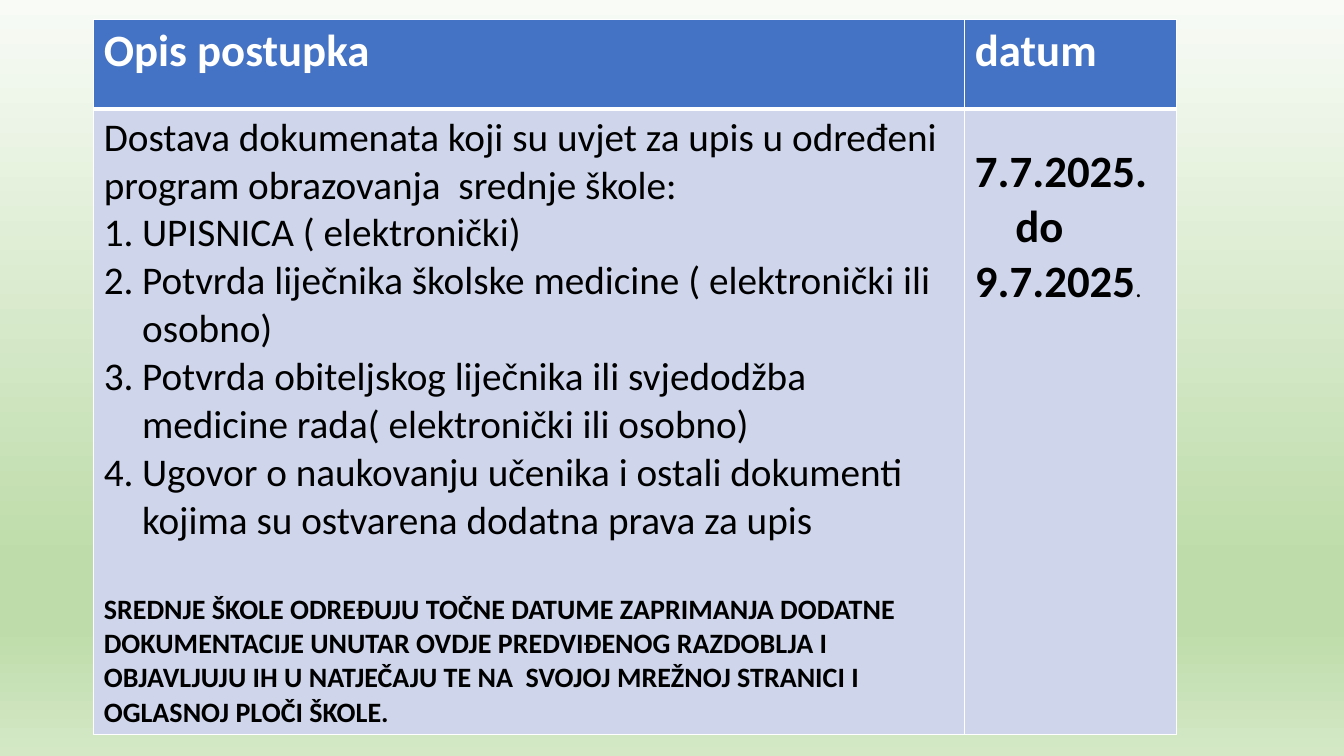
"""Build the slide with the table of enrolment documents and dates."""
from dataclasses import dataclass

from lxml import etree
from pptx import Presentation
from pptx.dml.color import RGBColor
from pptx.oxml.ns import qn
from pptx.slide import Slide
from pptx.table import _Cell
from pptx.util import Inches, Pt

WHITE = RGBColor(0xFF, 0xFF, 0xFF)
BLACK = RGBColor(0, 0, 0)
BLUE = RGBColor(0x44, 0x72, 0xC4)
PALE = RGBColor(0xCF, 0xD5, 0xEA)
MIST = RGBColor(0xF8, 0xFB, 0xF6)
LEAF = RGBColor(0xBE, 0xDC, 0xAA)
MINT = RGBColor(0xD4, 0xE8, 0xC6)
STOPS = ((0, MIST), (74, LEAF), (83, LEAF), (100, MINT))
FONT = "Calibri"


@dataclass
class Para:
    """A paragraph of a cell."""
    text: str
    size: int
    bold: bool = False
    step: bool = False
    left: float = 0
    before: int = 0
    tail: str = ""


@dataclass
class Box:
    """A cell with its fill, text colour and top margin."""
    paras: list[Para]
    fill: RGBColor
    ink: RGBColor
    top: float = 0.05


STEPS = (
    "UPISNICA ( elektronički)",
    "Potvrda liječnika školske medicine ( elektronički ili osobno)",
    "Potvrda obiteljskog liječnika ili svjedodžba medicine rada( elektronički ili osobno)",
    "Ugovor o naukovanju učenika i ostali dokumenti kojima su ostvarena dodatna prava za upis",
)
INTRO = "Dostava dokumenata koji su uvjet za upis u određeni program obrazovanja  srednje škole:"
NOTE = (
    "SREDNJE ŠKOLE ODREĐUJU TOČNE DATUME ZAPRIMANJA DODATNE DOKUMENTACIJE "
    "UNUTAR OVDJE PREDVIĐENOG RAZDOBLJA I OBJAVLJUJU IH U NATJEČAJU TE NA  "
    "SVOJOJ MREŽNOJ STRANICI I OGLASNOJ PLOČI ŠKOLE."
)
TASKS = [
    Para(INTRO, 28),
    *(Para(text, 28, step=True, left=0.38) for text in STEPS),
    Para(NOTE, 20, True, before=34),
]
DATES = [
    Para("7.7.2025.", 32, True),
    Para("do", 32, True, left=0.4),
    Para("9.7.2025", 32, True, tail="."),
]
ROWS = (
    (Box([Para("Opis postupka", 32, True)], BLUE, WHITE),
     Box([Para("datum", 32, True)], BLUE, WHITE)),
    (Box(TASKS, PALE, BLACK), Box(DATES, PALE, BLACK, 0.36)),
)
COLS = (8.64, 2.1)
HIGHS = (0.89, 6.16)


def paint(slide: Slide) -> None:
    """Give the slide its gradient background."""
    fill = slide.background.fill
    fill.gradient()
    fill.gradient_angle = 270
    stops = next(slide.element.iter(qn("a:gsLst")))
    for old in list(stops):
        stops.remove(old)
    for place, color in STOPS:
        stop = etree.SubElement(stops, qn("a:gs"), pos=str(place * 1000))
        etree.SubElement(stop, qn("a:srgbClr"), val=str(color))


def edge(cell: _Cell, side: str, width: int) -> None:
    """Draw one white border of a cell."""
    props = cell._tc.get_or_add_tcPr()
    line = etree.SubElement(props, qn(f"a:ln{side}"), w=str(Pt(width)))
    fill = etree.SubElement(line, qn("a:solidFill"))
    etree.SubElement(fill, qn("a:srgbClr"), val=str(WHITE))


def write(cell: _Cell, box: Box) -> None:
    """Write the paragraphs of a cell."""
    frame = cell.text_frame
    for i, item in enumerate(box.paras):
        para = frame.add_paragraph() if i else frame.paragraphs[0]
        para.font.name = FONT
        para.font.size = Pt(item.size)
        para.font.bold = item.bold
        para.font.color.rgb = box.ink
        para.space_before = Pt(item.before)
        para.add_run().text = item.text
        if item.tail:
            end = para.add_run()
            end.text = item.tail
            end.font.size = Pt(18)
            end.font.bold = False
        props = para._p.get_or_add_pPr()
        props.set("marL", str(Inches(item.left)))
        if item.step:
            props.set("indent", str(-Inches(item.left)))
            mark = etree.Element(qn("a:buAutoNum"), type="arabicPeriod")
            props.find(qn("a:defRPr")).addprevious(mark)


def main() -> None:
    """Build and save the slide."""
    deck = Presentation()
    deck.slide_width, deck.slide_height = Inches(13.33), Inches(7.5)
    slide = deck.slides.add_slide(deck.slide_layouts[6])
    paint(slide)
    table = slide.shapes.add_table(
        len(ROWS), len(COLS), Inches(0.93), Inches(0.19),
        Inches(sum(COLS)), Inches(sum(HIGHS))).table
    for col, wide in zip(table.columns, COLS):
        col.width = Inches(wide)
    for r, (row, high) in enumerate(zip(ROWS, HIGHS)):
        table.rows[r].height = Inches(high)
        for c, box in enumerate(row):
            cell = table.cell(r, c)
            cell.margin_top = Inches(box.top)
            for side in "LRTB":
                edge(cell, side, 3 if (r, side) in ((0, "B"), (1, "T")) else 1)
            cell.fill.solid()
            cell.fill.fore_color.rgb = box.fill
            write(cell, box)
    deck.save("out.pptx")


if __name__ == "__main__":
    main()
